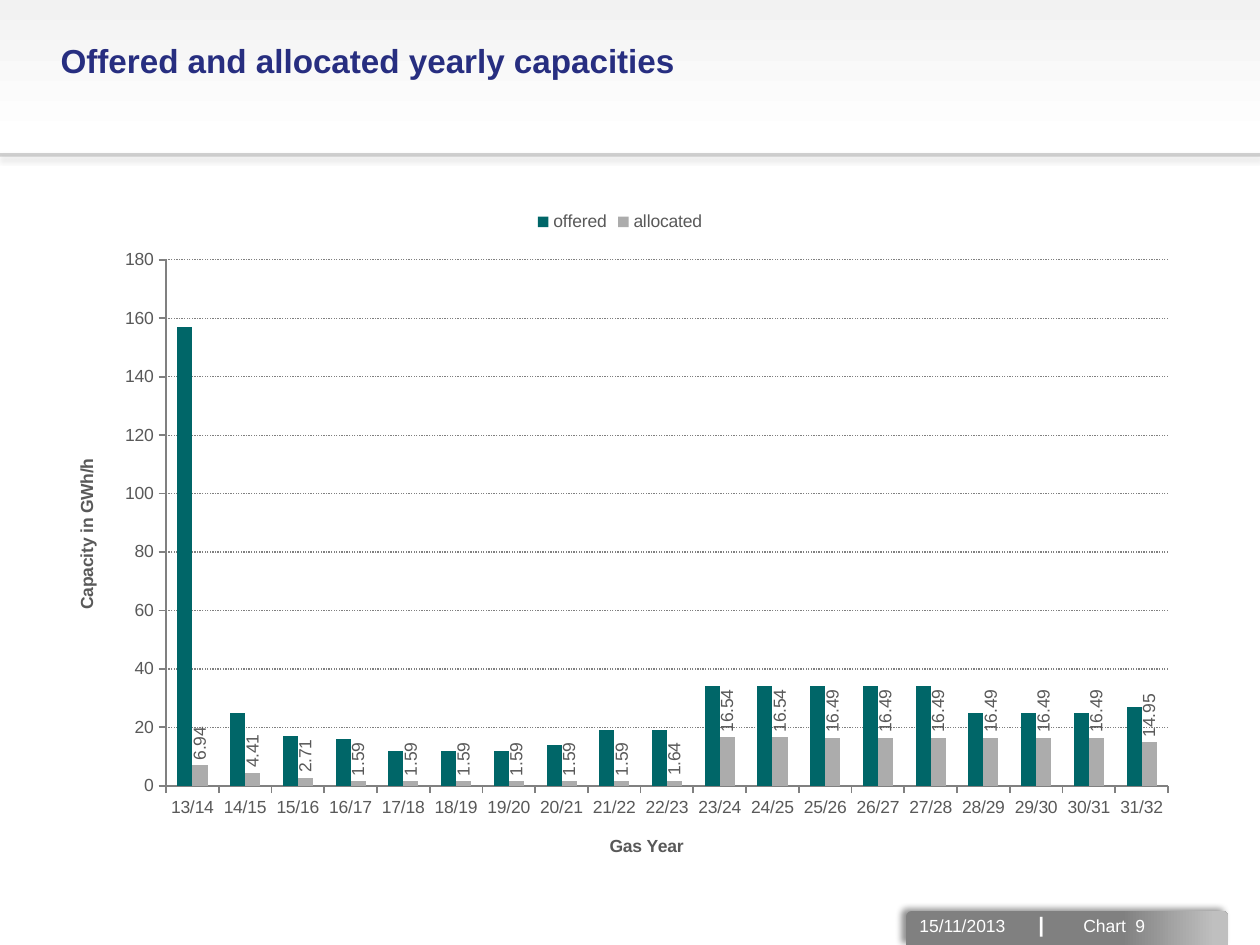
from pptx import Presentation, util as u
from pptx.chart.data import CategoryChartData
from pptx.dml.color import RGBColor
from pptx.enum import chart as charts, dml, shapes, text
from pptx.oxml import parse_xml
from pptx.oxml.ns import nsdecls, qn

PX = 914400 // 126
FONT = "Arial"
TITLE = "Offered and allocated yearly capacities"
FOOTER = [("15/11/2013\t", 10, False), ("|", 12, True), ("\tChart\t9", 10, False)]
FOOTER_TABS = [119, 164, 216]
YEARS = [f"{year}/{year + 1}" for year in range(13, 32)]
SERIES = [
    ("offered", "006668", "0",
     [157, 25, 17, 16, 12, 12, 12, 14, 19, 19, 34, 34, 34, 34, 34, 25, 25, 25, 27]),
    ("allocated", "ACACAC", "0.00",
     [6.94, 4.41, 2.71, 1.59, 1.59, 1.59, 1.59, 1.59, 1.59, 1.64,
      16.54, 16.54, 16.49, 16.49, 16.49, 16.49, 16.49, 16.49, 14.95]),
]
CHART_BOX = (49, 198, 1142, 684)
PLOT_BOX = (166, 260, 1002, 526)


def px(*lengths):
    return [length * PX for length in lengths]


def color(code):
    return RGBColor.from_string(code)


def style(font, size, code, bold=False):
    font.name, font.size, font.bold = FONT, u.Pt(size), bold
    font.color.rgb = color(code)


def set_gradient(fill, stops, angle):
    fill.gradient()
    fill.gradient_angle = angle
    for stop, (position, code) in zip(fill.gradient_stops, stops):
        stop.position = position
        stop.color.rgb = color(code)


def add_shadow(shape, alpha, blur, distance, direction):
    properties = shape._element.spPr
    for old in properties.findall(qn("a:effectLst")):
        properties.remove(old)
    properties.append(parse_xml(
        f'<a:effectLst {nsdecls("a")}><a:outerShdw blurRad="{u.Pt(blur)}" '
        f'dist="{u.Pt(distance)}" dir="{direction * 60000}" algn="ctr" rotWithShape="0">'
        f'<a:srgbClr val="000000"><a:alpha val="{alpha * 1000}"/></a:srgbClr>'
        '</a:outerShdw></a:effectLst>'))


def add_footer(page):
    tab = page.shapes.add_shape(shapes.MSO_SHAPE.ROUND_2_SAME_RECTANGLE,
                                *px(906, 911, 322, 34))
    set_gradient(tab.fill, [(0.67, "808080"), (0.96, "BFBFBF")], 0)
    tab.line.fill.background()
    add_shadow(tab, 43, 4, 3, 211)

    box = page.shapes.add_textbox(*px(907, 899, 294, 50))
    frame = box.text_frame
    frame.word_wrap = True
    frame.vertical_anchor = text.MSO_ANCHOR.MIDDLE
    para = frame.paragraphs[0]
    stops = "".join(f'<a:tab pos="{stop * PX}" algn="l"/>' for stop in FOOTER_TABS)
    para._p.get_or_add_pPr().append(
        parse_xml(f'<a:tabLst {nsdecls("a")}>{stops}</a:tabLst>'))
    for words, size, bold in FOOTER:
        span = para.add_run()
        span.text = words
        style(span.font, size, "FFFFFF", bold)


def add_header(page):
    rule = page.shapes.add_connector(shapes.MSO_CONNECTOR.STRAIGHT, *px(0, 155, 1260, 155))
    rule.line.color.rgb = color("808080")
    rule.line.width = u.Pt(2)
    shade = rule._element.spPr.find(".//" + qn("a:srgbClr"))
    shade.append(parse_xml(f'<a:alpha {nsdecls("a")} val="34000"/>'))
    add_shadow(rule, 35, 3.1, 1.8, 90)

    title = page.shapes.title
    title.left, title.top, title.width, title.height = px(48, 34, 1009, 111)
    title.text_frame.text = TITLE
    title.text_frame.vertical_anchor = text.MSO_ANCHOR.TOP
    para = title.text_frame.paragraphs[0]
    para.alignment = text.PP_ALIGN.LEFT
    style(para.runs[0].font, 19, "272E80", True)


def format_axis(axis, title):
    axis.axis_title.text_frame.text = title
    style(axis.axis_title.text_frame.paragraphs[0].runs[0].font, 10, "595959", True)
    style(axis.tick_labels.font, 10, "595959")
    axis.major_tick_mark = charts.XL_TICK_MARK.OUTSIDE
    axis.format.line.color.rgb = color("808080")
    axis.format.line.width = u.Pt(1)


def place_plot(chart):
    """Fix the inner plot area at PLOT_BOX within CHART_BOX."""
    left, top, width, height = CHART_BOX
    x, y, w, h = PLOT_BOX
    shares = {"x": (x - left) / width, "y": (y - top) / height,
              "w": w / width, "h": h / height}
    values = "".join(f'<c:{name} val="{share:.4f}"/>' for name, share in shares.items())
    area = chart.element.find(".//" + qn("c:plotArea"))
    for old in area.findall(qn("c:layout")):
        area.remove(old)
    area.insert(0, parse_xml(
        f'<c:layout {nsdecls("c")}><c:manualLayout><c:layoutTarget val="inner"/>'
        f'<c:xMode val="edge"/><c:yMode val="edge"/>{values}</c:manualLayout></c:layout>'))


def add_capacity_chart(page):
    data = CategoryChartData()
    data.categories = YEARS
    for name, _, number_format, values in SERIES:
        data.add_series(name, values, number_format)
    chart = page.shapes.add_chart(charts.XL_CHART_TYPE.COLUMN_CLUSTERED,
                                  *px(*CHART_BOX), data).chart
    style(chart.font, 10, "595959")
    chart.has_title = False
    chart.has_legend = True
    chart.legend.position = charts.XL_LEGEND_POSITION.TOP
    chart.legend.include_in_layout = False
    style(chart.legend.font, 10, "595959")

    plot = chart.plots[0]
    plot.vary_by_categories = False
    plot.gap_width, plot.overlap = 150, 0
    for series, (_, code, _, _) in zip(plot.series, SERIES):
        series.format.fill.solid()
        series.format.fill.fore_color.rgb = color(code)
        series.invert_if_negative = False
    labels = plot.series[1].data_labels
    labels.show_value = True
    labels.number_format, labels.number_format_is_linked = "0.00", False
    labels.position = charts.XL_LABEL_POSITION.OUTSIDE_END
    style(labels.font, 10, "595959")
    turned = chart.element.find(".//" + qn("c:dLbls")).find(".//" + qn("a:bodyPr"))
    turned.set("rot", "-5400000")
    turned.set("vert", "horz")

    format_axis(chart.category_axis, "Gas Year")
    values = chart.value_axis
    format_axis(values, "Capacity in GWh/h")
    values.minimum_scale, values.maximum_scale, values.major_unit = 0, 180, 20
    values.tick_labels.number_format = "0"
    values.tick_labels.number_format_is_linked = False
    grid = values.major_gridlines.format.line
    grid.color.rgb = color("808080")
    grid.width = u.Pt(0.75)
    grid.dash_style = dml.MSO_LINE.ROUND_DOT
    place_plot(chart)


def main():
    deck = Presentation()
    deck.slide_width, deck.slide_height = px(1260, 945)
    page = deck.slides.add_slide(deck.slide_layouts[5])
    set_gradient(page.background.fill, [(0.85, "FFFFFF"), (1, "F2F2F2")], 90)
    add_footer(page)
    add_header(page)
    add_capacity_chart(page)
    deck.save("out.pptx")


if __name__ == "__main__":
    main()
